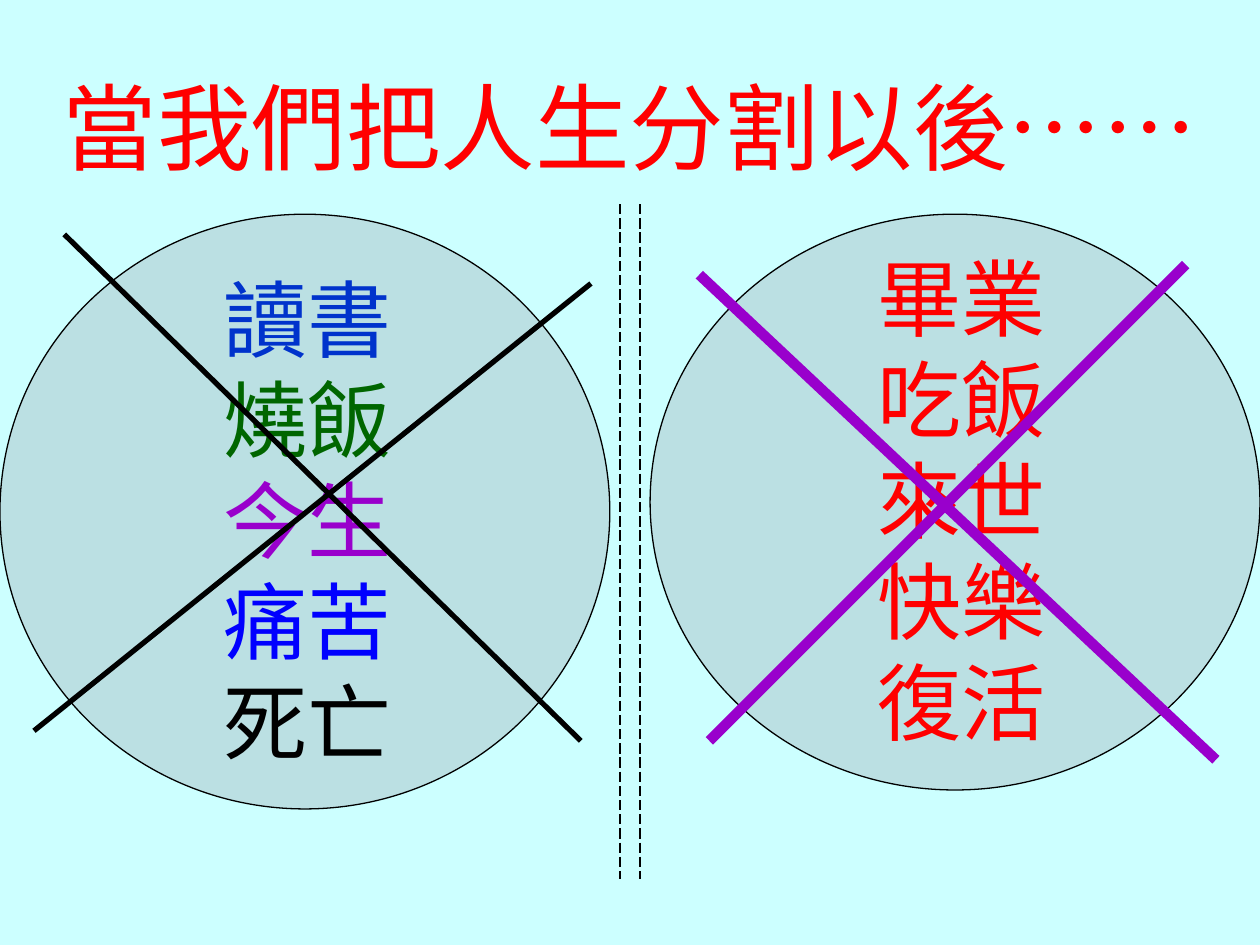
from dataclasses import dataclass

from lxml import etree
from pptx import Presentation
from pptx.dml.color import RGBColor
from pptx.enum.dml import MSO_LINE
from pptx.enum.shapes import MSO_CONNECTOR as CONN, MSO_SHAPE as SHAPE
from pptx.enum.text import PP_ALIGN as ALIGN
from pptx.oxml.ns import qn
from pptx.util import Inches, Pt


@dataclass(frozen=True)
class Theme:
    font: str = "Noto Sans CJK SC"
    title_size: int = 54
    word_size: int = 48
    leading: float = 1.2
    background: str = "CCFFFF"
    circle: str = "BBE0E3"
    black: str = "000000"
    red: str = "FF0000"
    navy: str = "0033CC"
    green: str = "006600"
    purple: str = "9900CC"
    blue: str = "0000FF"


THEME = Theme()


def rgb(value):
    return RGBColor.from_string(value)


def add_text(slide, box, lines, size, top_inset):
    """Centred lines, each given as (text, colour)."""
    tf = slide.shapes.add_textbox(*map(Inches, box)).text_frame
    tf.word_wrap = True
    tf.margin_top, tf.margin_bottom = Inches(top_inset), 0
    for i, (text, color) in enumerate(lines):
        p = tf.paragraphs[0] if i == 0 else tf.add_paragraph()
        p.alignment = ALIGN.CENTER
        p.line_spacing = Pt(size * THEME.leading)
        p.font.size = Pt(size)
        p.font.name = THEME.font
        p.font.color.rgb = rgb(color)
        # East Asian typeface follows the Latin one
        latin = p._p.pPr.find(qn("a:defRPr")).find(qn("a:latin"))
        ea = etree.Element(qn("a:ea"), typeface=THEME.font)
        latin.addnext(ea)
        p.add_run().text = text


def add_circle(slide, box):
    sp = slide.shapes.add_shape(SHAPE.OVAL, *map(Inches, box))
    sp.shadow.inherit = False
    sp.fill.solid()
    sp.fill.fore_color.rgb = rgb(THEME.circle)
    sp.line.color.rgb = rgb(THEME.black)
    sp.line.width = Pt(0.75)


def add_line(slide, ends, color, width, dash=None):
    ln = slide.shapes.add_connector(CONN.STRAIGHT, *map(Inches, ends))
    etree.SubElement(ln._element.spPr, qn("a:effectLst"))
    ln.line.color.rgb = rgb(color)
    ln.line.width = Pt(width)
    if dash:
        ln.line.dash_style = dash


def add_cross(slide, strokes, color, width):
    for ends in strokes:
        add_line(slide, ends, color, width)


def main():
    prs = Presentation()
    prs.slide_width, prs.slide_height = Inches(10), Inches(7.5)
    slide = prs.slides.add_slide(prs.slide_layouts[6])
    slide.background.fill.solid()
    slide.background.fill.fore_color.rgb = rgb(THEME.background)

    # Title
    add_text(slide, (0, 0, 10, 7.5), [("當我們把人生分割以後……", THEME.red)],
             THEME.title_size, 0.55)

    # The two halves of life
    add_circle(slide, (0, 1.7, 4.84, 4.72))
    add_circle(slide, (5.16, 1.7, 4.84, 4.57))
    before = [("讀書", THEME.navy), ("燒飯", THEME.green), ("今生", THEME.purple),
              ("痛苦", THEME.blue), ("死亡", THEME.black)]
    after = [(word, THEME.red) for word in ("畢業", "吃飯", "來世", "快樂", "復活")]
    add_text(slide, (1.14, 2.02, 2.6, 4.1), before, THEME.word_size, 0.1)
    add_text(slide, (6.65, 1.86, 1.97, 4.1), after, THEME.word_size, 0.1)

    # Crosses over both halves
    add_cross(slide, [(0.27, 5.8, 4.69, 2.25), (0.51, 1.86, 4.61, 5.88)],
              THEME.black, 3)
    add_cross(slide, [(5.63, 5.88, 9.41, 2.1), (5.55, 2.18, 9.65, 6.03)],
              THEME.purple, 6)

    # Dashed divider
    for x in (4.92, 5.08):
        add_line(slide, (x, 1.62, x, 6.98), THEME.black, 0.75, MSO_LINE.LONG_DASH)

    prs.save("out.pptx")


if __name__ == "__main__":
    main()
